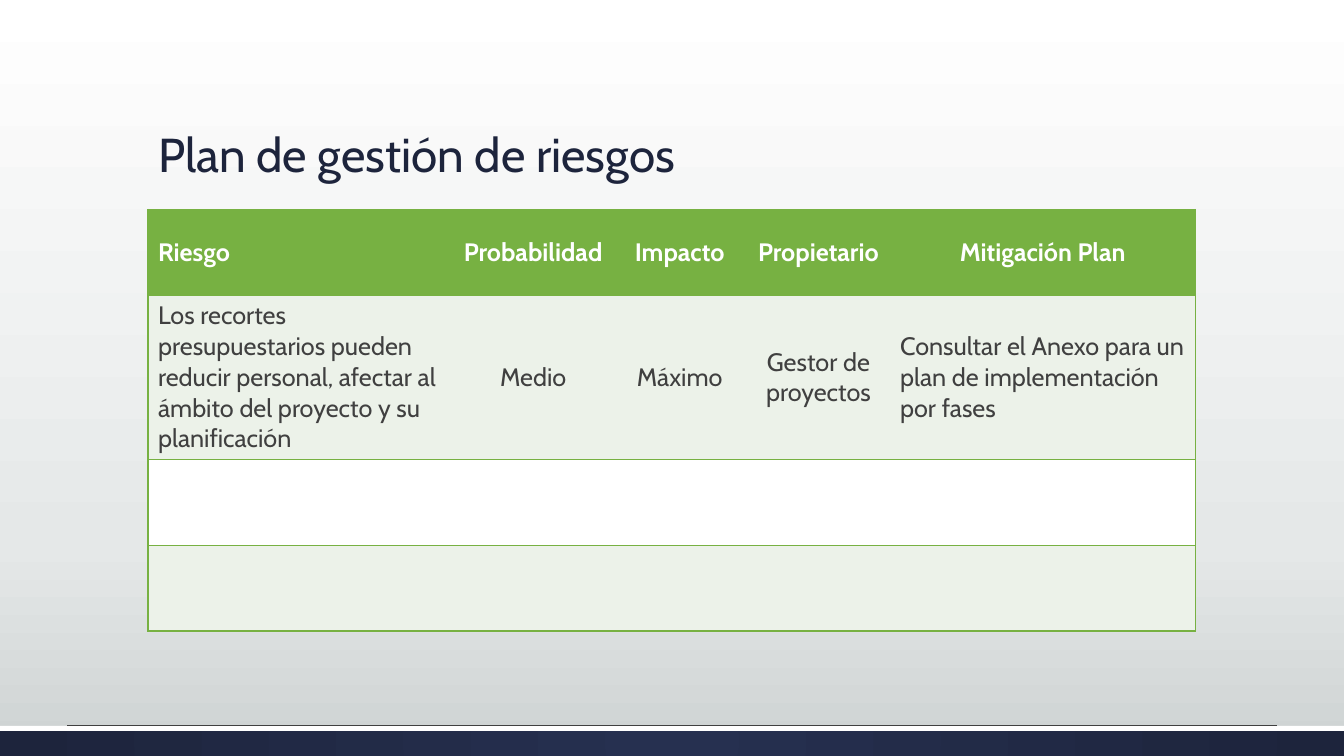
from dataclasses import dataclass

from lxml import etree
from pptx import Presentation
from pptx.dml.color import RGBColor
from pptx.enum.shapes import MSO_CONNECTOR, MSO_SHAPE
from pptx.enum.text import MSO_ANCHOR, MSO_AUTO_SIZE, PP_ALIGN
from pptx.oxml import parse_xml
from pptx.oxml.ns import nsdecls, qn
from pptx.util import Cm, Pt

RECT = MSO_SHAPE.RECTANGLE
LINE = MSO_CONNECTOR.STRAIGHT
MIDDLE, BOTTOM = MSO_ANCHOR.MIDDLE, MSO_ANCHOR.BOTTOM
NO_FIT = MSO_AUTO_SIZE.NONE
LEFT, CENTER = PP_ALIGN.LEFT, PP_ALIGN.CENTER

FONT = "Cabin"
NAVY = RGBColor(0x1D, 0x24, 0x3C)
BLUE = RGBColor(0x26, 0x30, 0x50)
GREEN = RGBColor(0x77, 0xB1, 0x42)
PALE = RGBColor(0xEC, 0xF2, 0xE9)
WHITE = RGBColor(0xFF, 0xFF, 0xFF)
MIST = RGBColor(0xE5, 0xE8, 0xE8)
SILVER = RGBColor(0xCD, 0xD2, 0xD2)
GRAY = RGBColor(0x40, 0x40, 0x40)

PLAIN = "{2D5ABB26-0587-4C30-8999-92F81FD0307C}"
DOWN = '<a:lin ang="5400000" scaled="0"/>'
ROUND = ('<a:path path="circle"><a:fillToRect l="50000" t="50000" '
         'r="50000" b="50000"/></a:path>')


@dataclass
class Column:
    width: float
    head: str
    text: str
    head_align: PP_ALIGN = CENTER
    align: PP_ALIGN = CENTER


@dataclass
class Row:
    height: float
    fill: RGBColor


@dataclass
class Bar:
    height: float
    fill: RGBColor


COLUMNS = [
    Column(7.7, "Riesgo",
           "Los recortes presupuestarios pueden reducir personal, afectar al "
           "ámbito del proyecto y su planificación", LEFT, LEFT),
    Column(4.01, "Probabilidad", "Medio"),
    Column(3.38, "Impacto", "Máximo"),
    Column(3.61, "Propietario", "Gestor de proyectos"),
    Column(7.7, "Mitigación Plan",
           "Consultar el Anexo para un plan de implementación por fases",
           CENTER, LEFT),
]
ROWS = [Row(2.16, GREEN), Row(4.14, PALE), Row(2.16, WHITE), Row(2.16, PALE)]
BARS = [Bar(0.76, NAVY), Bar(0.13, WHITE)]


def blend(root, stops, shade: str) -> None:
    grad = next(root.iter(qn("a:gradFill")))
    marks = "".join(
        f'<a:gs pos="{spot * 1000}"><a:srgbClr val="{color}"/></a:gs>'
        for spot, color in stops)
    fresh = parse_xml(f'<a:gradFill {nsdecls("a")} rotWithShape="1">'
                      f'<a:gsLst>{marks}</a:gsLst>{shade}</a:gradFill>')
    grad.getparent().replace(grad, fresh)


def write(para, text: str, size: float, color: RGBColor,
          bold: bool = False, align: PP_ALIGN = LEFT) -> None:
    para.alignment = align
    run = para.add_run()
    run.text = text
    font = run.font
    font.name, font.size, font.bold = FONT, Pt(size), bold
    font.color.rgb = color


def border(cell, sides: str) -> None:
    props = cell._tc.get_or_add_tcPr()
    for side in sides:
        props.append(parse_xml(
            f'<a:ln{side} {nsdecls("a")} w="12700"><a:solidFill>'
            f'<a:srgbClr val="{GREEN}"/></a:solidFill></a:ln{side}>'))


def draw_back(slide) -> None:
    slide.background.fill.gradient()
    blend(slide.element, [(0, WHITE), (72, MIST), (100, SILVER)], DOWN)
    for bar in BARS:
        shape = slide.shapes.add_shape(
            RECT, 0, Cm(18.29), Cm(33.87), Cm(bar.height))
        shape.shadow.inherit = False
        shape.line.fill.background()
        if bar.fill == NAVY:
            shape.fill.gradient()
            blend(shape.element, [(0, BLUE), (100, NAVY)], ROUND)
        else:
            shape.fill.solid()
            shape.fill.fore_color.rgb = bar.fill
    rule = slide.shapes.add_connector(
        LINE, Cm(1.7), Cm(18.27), Cm(32.17), Cm(18.27))
    rule.line.color.rgb = GRAY
    rule.line.width = Pt(0.5)
    etree.SubElement(rule.element.spPr, qn("a:effectLst"))


def draw_title(slide) -> None:
    title = slide.shapes.title
    title.left, title.top = Cm(3.73), Cm(1.3)
    title.width, title.height = Cm(26.42), Cm(3.43)
    frame = title.text_frame
    frame.word_wrap, frame.auto_size = True, NO_FIT
    frame.vertical_anchor = BOTTOM
    para = frame.paragraphs[0]
    para.line_spacing = 0.9
    write(para, "Plan de gestión de riesgos", 34, NAVY)


def draw_table(slide) -> None:
    width = sum(col.width for col in COLUMNS)
    height = sum(row.height for row in ROWS)
    frame = slide.shapes.add_table(
        len(ROWS), len(COLUMNS), Cm(3.73), Cm(5.28), Cm(width), Cm(height))
    next(frame.element.iter(qn("a:tableStyleId"))).text = PLAIN
    table = frame.table
    table.horz_banding = False
    for i, row in enumerate(ROWS):
        table.rows[i].height = Cm(row.height)
        for j, col in enumerate(COLUMNS):
            table.columns[j].width = Cm(col.width)
            cell = table.cell(i, j)
            cell.vertical_anchor = MIDDLE
            left = "L" if j == 0 else ""
            right = "R" if j == len(COLUMNS) - 1 else ""
            border(cell, left + right + "TB")
            cell.fill.solid()
            cell.fill.fore_color.rgb = row.fill
            para = cell.text_frame.paragraphs[0]
            if i == 0:
                write(para, col.head, 18, WHITE, True, col.head_align)
            elif i == 1:
                write(para, col.text, 18, GRAY, False, col.align)


def main() -> None:
    deck = Presentation()
    deck.slide_width, deck.slide_height = Cm(33.87), Cm(19.05)
    slide = deck.slides.add_slide(deck.slide_layouts[5])
    draw_back(slide)
    draw_title(slide)
    draw_table(slide)
    deck.save("out.pptx")


if __name__ == "__main__":
    main()
